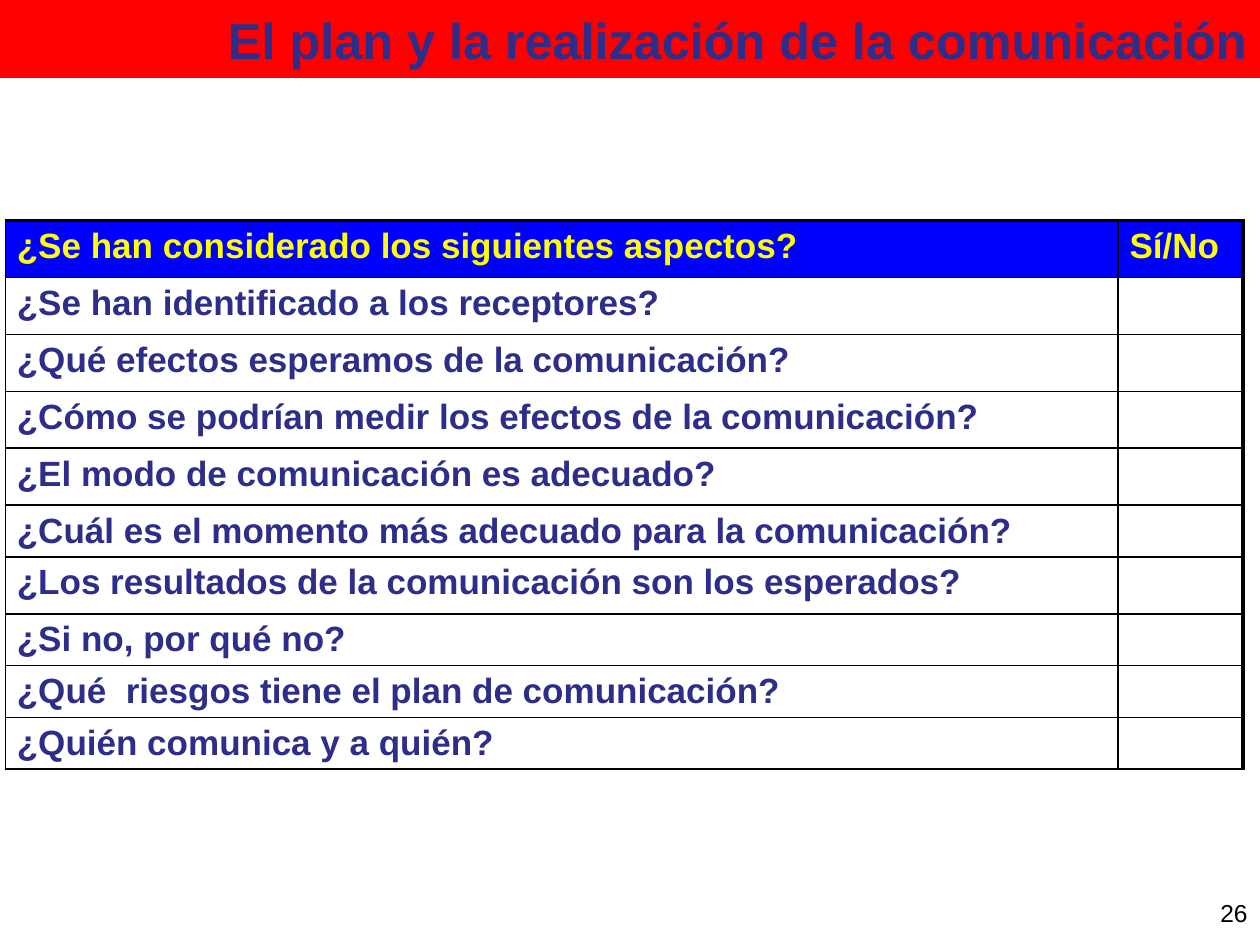
from lxml.etree import SubElement
from pptx import Presentation
from pptx.dml.color import RGBColor
from pptx.enum.shapes import MSO_SHAPE as Preset
from pptx.enum.text import MSO_ANCHOR as Anchor, PP_ALIGN as Align
from pptx.oxml.ns import qn
from pptx.util import Cm, Pt

RED = RGBColor(0xFF, 0x00, 0x00)
BLUE = RGBColor(0x00, 0x00, 0xFF)
NAVY = RGBColor(0x2D, 0x2D, 0x8A)
YELLOW = RGBColor(0xFF, 0xFF, 0x00)
BLACK = RGBColor(0x00, 0x00, 0x00)

HEADER = ("¿Se han considerado los siguientes aspectos?", "Sí/No")
TALL, SHORT = 1.15, 1.04
QUESTIONS = [
    ("¿Se han identificado a los receptores?", TALL),
    ("¿Qué efectos esperamos de la comunicación?", TALL),
    ("¿Cómo se podrían medir los efectos de la comunicación?", TALL),
    ("¿El modo de comunicación es adecuado?", TALL),
    ("¿Cuál es el momento más adecuado para la comunicación?", SHORT),
    ("¿Los resultados de la comunicación son los esperados?", TALL),
    ("¿Si no, por qué no?", SHORT),
    ("¿Qué  riesgos tiene el plan de comunicación?", SHORT),
    ("¿Quién comunica y a quién?", SHORT),
]


class Page:
    font = "Arial"
    thin, thick = 1, 2.25

    def __init__(self, slide):
        self.slide = slide

    def label(self, frame, text, size, color, bold=False, align=Align.LEFT):
        frame.text = text
        frame.word_wrap = True
        for para in frame.paragraphs:
            para.alignment = align
            for span in para.runs:
                span.font.name = self.font
                span.font.size = Pt(size)
                span.font.bold = bold
                span.font.color.rgb = color

    def banner(self, text, left, top, width, height):
        box = self.slide.shapes.add_shape(
            Preset.RECTANGLE, Cm(left), Cm(top), Cm(width), Cm(height))
        box.shadow.inherit = False
        box.fill.solid()
        box.fill.fore_color.rgb = RED
        box.line.fill.background()
        box.text_frame.vertical_anchor = Anchor.MIDDLE
        self.label(box.text_frame, text, 28.8, NAVY, True, Align.RIGHT)

    def number(self, text, left, top, width, height):
        box = self.slide.shapes.add_textbox(
            Cm(left), Cm(top), Cm(width), Cm(height))
        box.text_frame.vertical_anchor = Anchor.MIDDLE
        self.label(box.text_frame, text, 14, BLACK, align=Align.RIGHT)

    def borders(self, cell, widths):
        properties = cell._tc.get_or_add_tcPr()
        for side, width in zip("LRTB", widths):
            line = SubElement(properties, qn(f"a:ln{side}"), w=str(Pt(width)))
            fill = SubElement(line, qn("a:solidFill"))
            SubElement(fill, qn("a:srgbClr"), val=str(BLACK))

    def checklist(self, rows, heights, left, top, widths):
        table = self.slide.shapes.add_table(
            len(rows), len(widths), Cm(left), Cm(top),
            Cm(sum(widths)), Cm(sum(heights))).table
        table.first_row = table.horz_banding = False
        for column, width in zip(table.columns, widths):
            column.width = Cm(width)
        for r, (texts, height) in enumerate(zip(rows, heights)):
            table.rows[r].height = Cm(height)
            for c, text in enumerate(texts):
                cell = table.cell(r, c)
                cell.margin_left = cell.margin_right = Cm(0.23)
                right = self.thick if c == len(widths) - 1 else self.thin
                upper = self.thin if r else self.thick
                self.borders(cell, (self.thin, right, upper, self.thin))
                if r:
                    cell.fill.background()
                else:
                    cell.fill.solid()
                    cell.fill.fore_color.rgb = BLUE
                if text:
                    color = NAVY if r else YELLOW
                    self.label(cell.text_frame, text, 20, color, True)


def main():
    deck = Presentation()
    deck.slide_width, deck.slide_height = Cm(25.4), Cm(19.05)
    page = Page(deck.slides.add_slide(deck.slide_layouts[6]))
    page.banner("El plan y la realización de la comunicación", 0, 0, 25.4, 1.57)
    rows = [HEADER] + [(question, "") for question, _ in QUESTIONS]
    heights = [TALL] + [height for _, height in QUESTIONS]
    page.checklist(rows, heights, 0.11, 4.44, (22.43, 2.52))
    page.number("26", 19.48, 17.73, 5.92, 1.32)
    deck.save("out.pptx")


if __name__ == "__main__":
    main()
